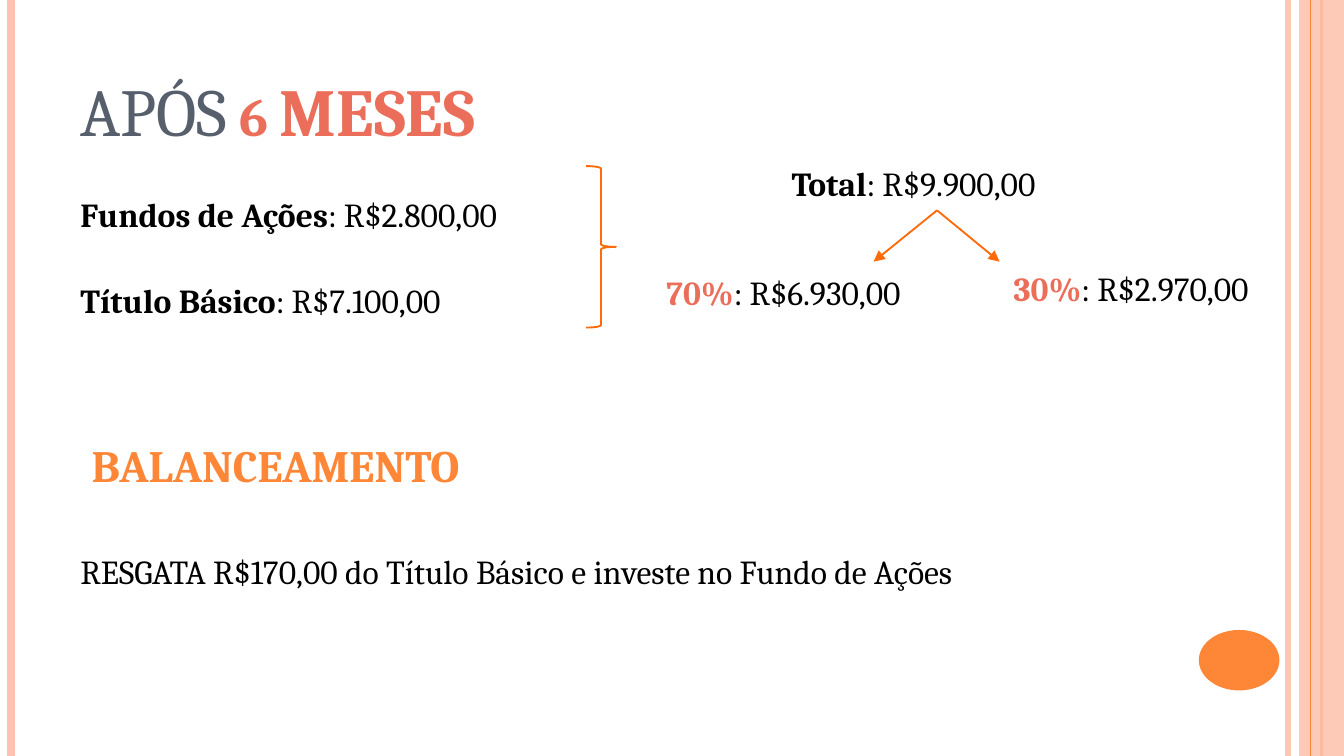
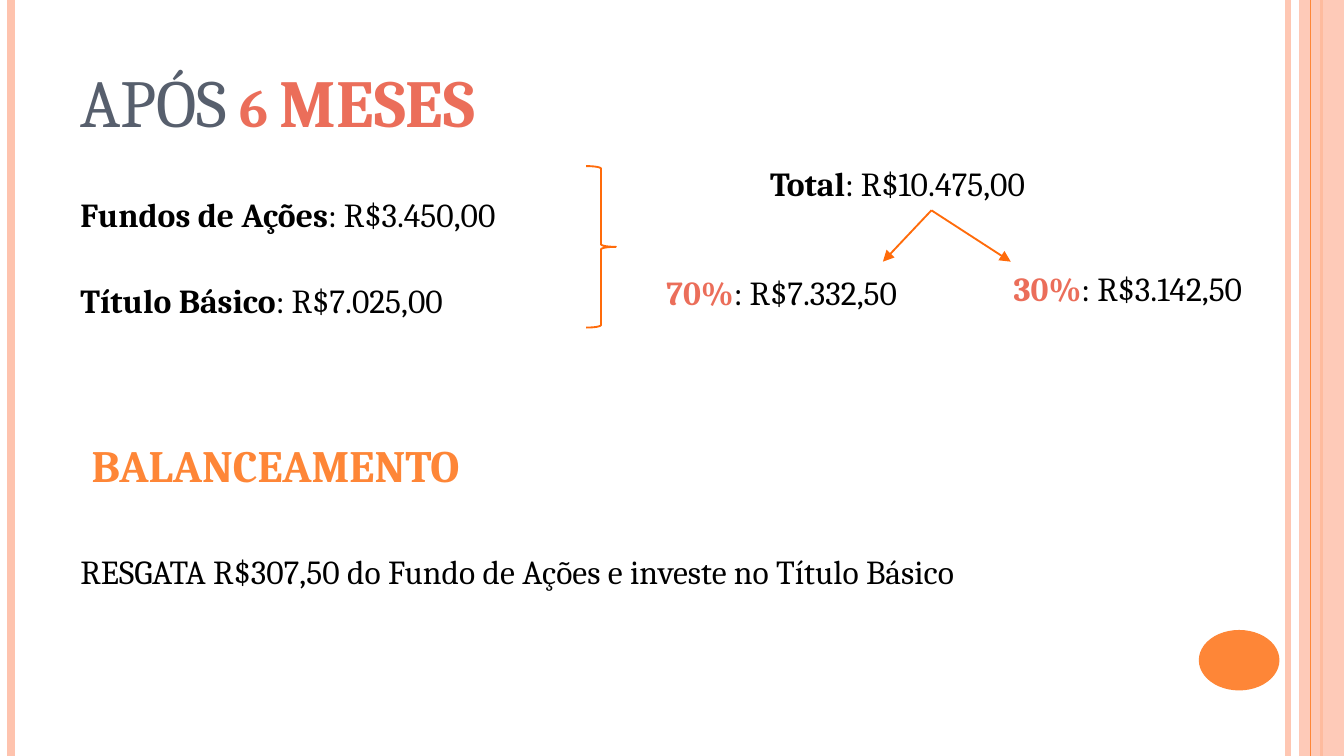
from lxml.etree import SubElement
from pptx import Presentation
from pptx.dml.color import RGBColor
from pptx.enum.shapes import MSO_CONNECTOR, MSO_SHAPE
from pptx.enum.text import MSO_ANCHOR, MSO_AUTO_SIZE
from pptx.oxml.ns import qn
from pptx.util import Pt

W, H = 720, 405
FONT = "Cambria"
BLACK, SLATE, CORAL = "000000", "575F6D", "EB6E5A"
ORANGE, PEACH, ARROW = "FE8637", "FEC3AE", "FF6B0A"

SLIDES = [
    {"title_top": 16.5, "funds": "R$2.800,00", "bond": "R$7.100,00",
     "total": "R$9.900,00", "total_box": (417, 170),
     "tips": (468, 535.5), "shares": ("R$6.930,00", "R$2.970,00"),
     "action": "RESGATA R$170,00 do Título Básico e investe no Fundo de Ações"},
    {"title_top": 11.5, "funds": "R$3.450,00", "bond": "R$7.025,00",
     "total": "R$10.475,00", "total_box": (405.5, 187),
     "tips": (473, 541.5), "shares": ("R$7.332,50", "R$3.142,50"),
     "action": "RESGATA R$307,50 do Fundo de Ações e investe no Título Básico"},
]


def rgb(color):
    return RGBColor.from_string(color)


def set_alpha(fill_owner, alpha):
    color = next(fill_owner.iter(qn("a:srgbClr")))
    SubElement(color, qn("a:alpha")).set("val", str(alpha * 1000))


def add_line(s, start, end, color, width, alpha=None, arrow=False):
    cn = s.shapes.add_connector(MSO_CONNECTOR.STRAIGHT, *map(Pt, start + end))
    cn.line.color.rgb = rgb(color)
    cn.line.width = Pt(width)
    ln = cn.line._get_or_add_ln()
    if alpha:
        set_alpha(ln, alpha)
    if arrow:
        SubElement(ln, qn("a:tailEnd")).set("type", "triangle")
    SubElement(cn._element.spPr, qn("a:effectLst"))


def add_shape(s, kind, box, fill=None, line=None, alpha=None):
    sp = s.shapes.add_shape(kind, *map(Pt, box))
    sp.shadow.inherit = False
    if fill:
        sp.fill.solid()
        sp.fill.fore_color.rgb = rgb(fill)
        if alpha:
            set_alpha(sp._element.spPr, alpha)
    else:
        sp.fill.background()
    if line:
        sp.line.color.rgb = rgb(line)
        sp.line.width = Pt(1)
    else:
        sp.line.fill.background()


def add_text(s, box, runs, size=18, anchor=MSO_ANCHOR.TOP, small_caps=False):
    tf = s.shapes.add_textbox(*map(Pt, box)).text_frame
    frame = {"word_wrap": True, "vertical_anchor": anchor,
             "auto_size": MSO_AUTO_SIZE.NONE if small_caps
             else MSO_AUTO_SIZE.SHAPE_TO_FIT_TEXT}
    for name, value in frame.items():
        setattr(tf, name, value)
    p = tf.paragraphs[0]
    for text, color, bold in runs:
        r = p.add_run()
        r.text = text
        for name, value in {"name": FONT, "size": Pt(size), "bold": bold}.items():
            setattr(r.font, name, value)
        r.font.color.rgb = rgb(color)
        if small_caps:
            r._r.get_or_add_rPr().set("cap", "small")


def add_amount(s, box, label, value, color=BLACK):
    add_text(s, box, [(label, color, True), (f": {value}", BLACK, False)])


def frame_bands(s, box):
    x, y, w, h = box

    def rule(dx, color, width, alpha=None):
        add_line(s, (x + dx, y), (x + dx, y + h), color, width, alpha)

    rule(w - 30, PEACH, 3, 93)
    rule(6, PEACH, 4.5)
    rule(w - 12, ORANGE, 1.5)
    add_shape(s, MSO_SHAPE.RECTANGLE, (x + w - 24, y, 24, h), PEACH, alpha=87)
    rule(w - 18, ORANGE, 0.75)
    add_shape(s, MSO_SHAPE.OVAL, (x + w - 77.75, y + h - 67.5, 43.2, 32.4), ORANGE)


def title(s, box):
    add_text(s, box, [("APÓS ", SLATE, False), ("6 MESES", CORAL, True)],
             36, MSO_ANCHOR.BOTTOM, True)


def holdings(s, box, data):
    x, y, w, h = box
    rows = (("Fundos de Ações", "funds"), ("Título Básico", "bond"))
    for i, (label, key) in enumerate(rows):
        add_amount(s, (x, y + 11.5 + i * 45.7, w - 16, 29), label, data[key])
    add_shape(s, MSO_SHAPE.RIGHT_BRACE, (x + w - 16, y, 16, h), line=ARROW)


def split(s, box, data):
    x, y, w, h = box
    left, width = data["total_box"]
    add_amount(s, (left, y, width, 29), "Total", data["total"])
    for tip in data["tips"]:
        add_line(s, (left + width / 2, y + 29), (tip, y + 56.5), ARROW, 1, arrow=True)
    spots = ((x, y + 58.5), (x + w - 169, y + 56.5))
    for spot, label, value in zip(spots, ("70%", "30%"), data["shares"]):
        add_amount(s, spot + (169, 29), label, value, CORAL)


def rebalancing(s, box, data):
    x, y, w, h = box
    add_text(s, (x + 6, y, 287, 36), [("BALANCEAMENTO", ORANGE, True)], 24)
    add_text(s, (x, y + h - 29, w, 29), [(data["action"], BLACK, False)])


def build_slide(prs, data):
    s = prs.slides.add_slide(prs.slide_layouts[6])
    frame_bands(s, (0, 0, W, H))
    title(s, (36, data["title_top"], 588, 67.5))
    holdings(s, (36, 89, 294, 86.5), data)
    split(s, (350, 83.7, 355, 88), data)
    rebalancing(s, (36, 231, 601, 89.6), data)


def main():
    prs = Presentation()
    prs.slide_width, prs.slide_height = Pt(W), Pt(H)
    for data in SLIDES:
        build_slide(prs, data)
    prs.save("out.pptx")


if __name__ == "__main__":
    main()
